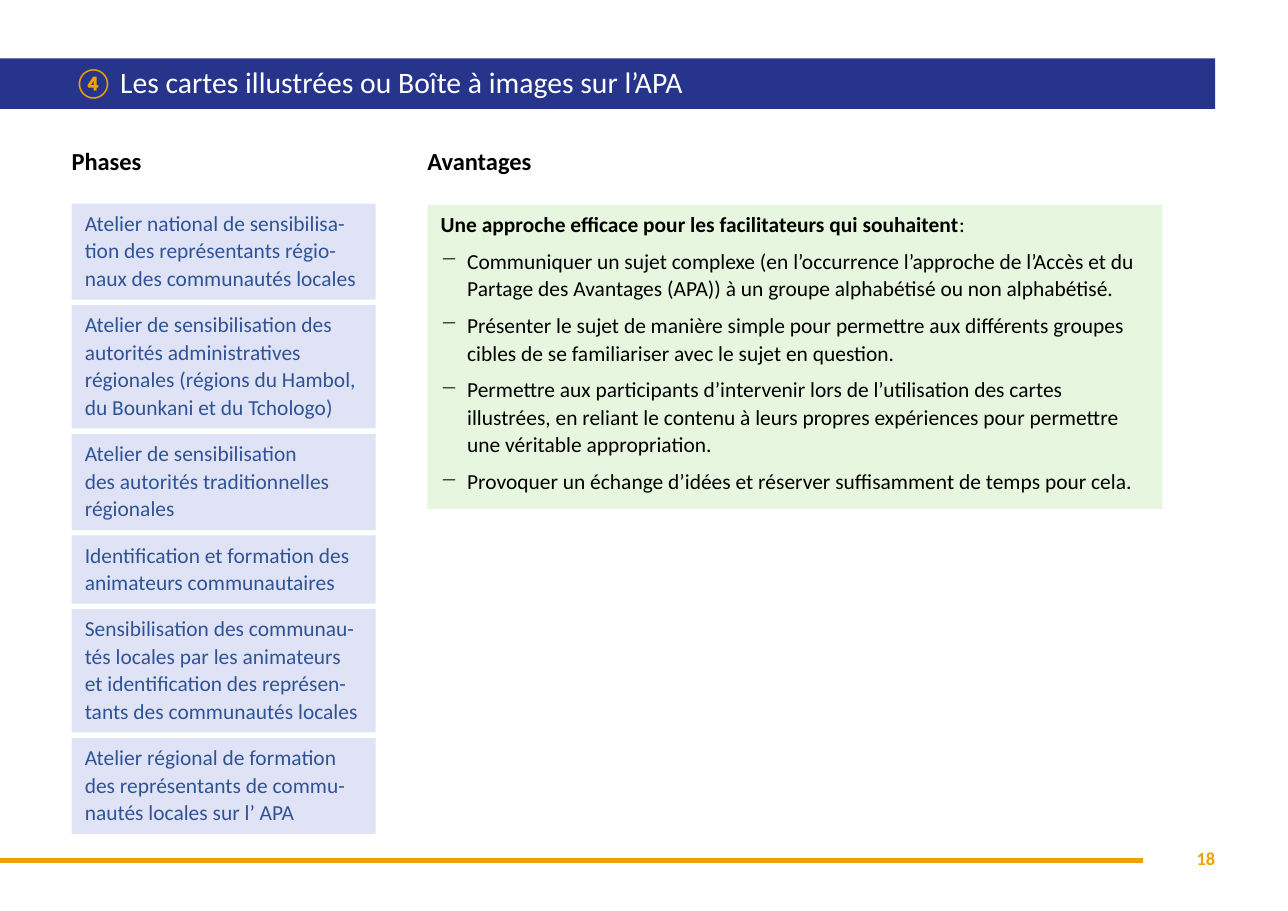
from lxml import etree
from pptx import Presentation
from pptx.dml.color import RGBColor
from pptx.enum import shapes, text
from pptx.oxml import ns
from pptx.util import Inches, Pt

NAVY = RGBColor(0x27, 0x34, 0x8B)
GOLD = RGBColor(0xEE, 0xA1, 0x00)
BLUE = RGBColor(0x2F, 0x54, 0x96)
LILAC = RGBColor(0xE0, 0xE3, 0xF6)
GREEN = RGBColor(0xDE, 0xF3, 0xD2)
BLACK = RGBColor(0, 0, 0)
WHITE = RGBColor(0xFF, 0xFF, 0xFF)

TITLE = "Les cartes illustrées ou Boîte à images sur l’APA"
LEAD = "Une approche efficace pour les facilitateurs qui souhaitent"
# Each phase: its number of lines, then its text
PHASES = [
    (3, "Atelier national de sensibilisa-tion des représentants régio-naux des communautés locales"),
    (4, "Atelier de sensibilisation des autorités administratives régionales "
        "(régions du Hambol, du Bounkani et du Tchologo)"),
    (3, "Atelier de sensibilisation\ndes autorités traditionnelles régionales"),
    (2, "Identification et formation des animateurs communautaires"),
    (4, "Sensibilisation des communau-tés locales par les animateurs "
        "et identification des représen-tants des communautés locales"),
    (3, "Atelier régional de formation\ndes représentants de commu-nautés locales sur l’ APA"),
]
GAINS = [
    "Communiquer un sujet complexe (en l’occurrence l’approche de l’Accès et du "
    "Partage des Avantages (APA)) à un groupe alphabétisé ou non alphabétisé.",
    "Présenter le sujet de manière simple pour permettre aux différents groupes "
    "cibles de se familiariser avec le sujet en question.",
    "Permettre aux participants d’intervenir lors de l’utilisation des cartes illustrées, "
    "en reliant le contenu à leurs propres expériences pour permettre une véritable appropriation.",
    "Provoquer un échange d’idées et réserver suffisamment de temps pour cela.",
]


def add_run(para, words, size, color, bold=False):
    run = para.add_run()
    run.text = words
    font = run.font
    font.name, font.size, font.bold = "Calibri", Pt(size), bold
    font.color.rgb = color


def set_frame(shape, left=0, top=0, right=0, bottom=0):
    """Wrap the text of a shape, set its margins in inches and return the frame."""
    frame = shape.text_frame
    frame.word_wrap = True
    frame.auto_size = text.MSO_AUTO_SIZE.NONE
    frame.vertical_anchor = text.MSO_ANCHOR.TOP
    frame.margin_left, frame.margin_top = Inches(left), Inches(top)
    frame.margin_right, frame.margin_bottom = Inches(right), Inches(bottom)
    return frame


def add_label(slide, x, y, w, h, words, size, color, align=text.PP_ALIGN.LEFT):
    box = slide.shapes.add_textbox(Inches(x), Inches(y), Inches(w), Inches(h))
    para = set_frame(box).paragraphs[0]
    para.alignment = align
    para.line_spacing = 0.9
    add_run(para, words, size, color, True)


def add_panel(slide, x, y, w, h, color):
    box = slide.shapes.add_shape(shapes.MSO_SHAPE.RECTANGLE,
                                 Inches(x), Inches(y), Inches(w), Inches(h))
    box.shadow.inherit = False
    box.fill.solid()
    box.fill.fore_color.rgb = color
    box.line.fill.background()
    return box


def style_para(para, after=0):
    para.alignment = text.PP_ALIGN.LEFT
    para.line_spacing = Pt(18)
    para.space_after = Pt(after)


def add_dash(para):
    props = para._p.get_or_add_pPr()
    props.set("marL", str(Inches(0.24)))
    props.set("indent", str(-Inches(0.24)))
    etree.SubElement(props, ns.qn("a:buChar")).set("char", "−")


def draw_title(slide, x, y, w, h):
    bar = slide.shapes.title
    bar.left, bar.top, bar.width, bar.height = map(Inches, (x, y, w, h))
    bar.fill.solid()
    bar.fill.fore_color.rgb = NAVY
    frame = set_frame(bar, 0.67, 0.04, 0.39, 0.04)
    frame.vertical_anchor = text.MSO_ANCHOR.MIDDLE
    para = frame.paragraphs[0]
    para.alignment = text.PP_ALIGN.LEFT
    para.line_spacing = 0.9
    add_run(para, "④ ", 19.4, GOLD, True)
    add_run(para, TITLE, 19.4, WHITE)


def draw_phases(slide, x, y, w):
    add_label(slide, x, y, w, 0.24, "Phases", 16, BLACK)
    top = y + 0.49
    for count, words in PHASES:
        high = count * 0.25 + 0.12
        box = add_panel(slide, x, top, w, high, LILAC)
        para = set_frame(box, 0.12, 0.04, 0.12, 0.08).paragraphs[0]
        style_para(para)
        for i, line in enumerate(words.split("\n")):
            if i:
                para.add_line_break()
            add_run(para, line, 14, BLUE)
        top += high + 0.05


def draw_gains(slide, x, y, w):
    add_label(slide, x, y, w, 0.24, "Avantages", 16, BLACK)
    box = add_panel(slide, x, y + 0.5, w, 2.76, GREEN)
    tint = box.fill._xPr.find(".//" + ns.qn("a:srgbClr"))
    etree.SubElement(tint, ns.qn("a:alpha")).set("val", "70000")
    frame = set_frame(box, 0.12, 0.04, 0.12, 0.12)
    para = frame.paragraphs[0]
    style_para(para, 6)
    add_run(para, LEAD, 14, BLACK, True)
    add_run(para, ":", 14, BLACK)
    for gain in GAINS:
        para = frame.add_paragraph()
        style_para(para, 6)
        add_dash(para)
        add_run(para, gain, 14, BLACK)


def draw_footer(slide, y, end, right):
    rule = slide.shapes.add_connector(shapes.MSO_CONNECTOR.STRAIGHT,
                                      0, Inches(y), Inches(end), Inches(y))
    rule.line.color.rgb = GOLD
    rule.line.width = Pt(3)
    etree.SubElement(rule._element.spPr, ns.qn("a:effectLst"))
    add_label(slide, right - 0.74, y - 0.1, 0.74, 0.2, "18", 12, GOLD, text.PP_ALIGN.RIGHT)


def main():
    deck = Presentation()
    deck.slide_width, deck.slide_height = Inches(11.69), Inches(8.27)
    slide = deck.slides.add_slide(deck.slide_layouts[5])
    draw_title(slide, 0, 0.53, 11.03, 0.46)
    draw_phases(slide, 0.65, 1.36, 2.76)
    draw_gains(slide, 3.88, 1.36, 6.67)
    draw_footer(slide, 7.81, 10.37, 11.03)
    deck.save("out.pptx")


if __name__ == "__main__":
    main()
